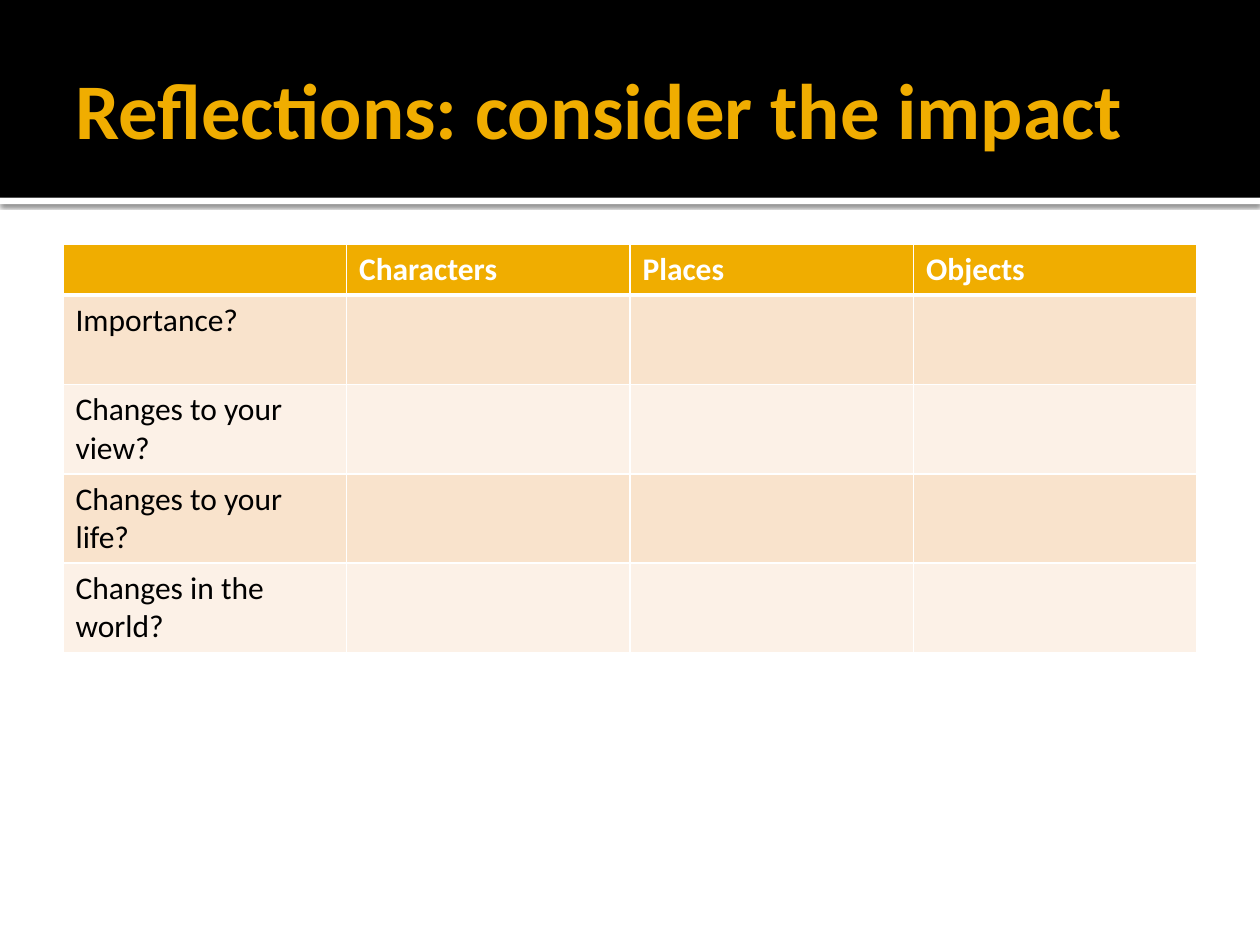
from dataclasses import dataclass

from lxml import etree
from pptx import Presentation
from pptx import util as u
from pptx.dml.color import RGBColor
from pptx.enum import shapes, text
from pptx.oxml import ns


@dataclass(frozen=True)
class Theme:
    font: str = "Calibri"
    gold: str = "F0AD00"
    white: str = "FFFFFF"
    black: str = "000000"
    bands: tuple = ("F9E3CC", "FCF1E7")
    title: int = 45
    body: int = 18


THEME = Theme()
HEADS = ["", "Characters", "Places", "Objects"]
ROWS = ["Importance?", "Changes to your view?",
        "Changes to your life?", "Changes in the world?"]


def write(frame, words, size=THEME.body, color=THEME.black, bold=False):
    run = frame.paragraphs[0].add_run()
    run.text = words
    font = run.font
    font.name, font.size, font.bold = THEME.font, u.Pt(size), bold
    font.color.rgb = RGBColor.from_string(color)


def node(parent, tag, **attrs):
    return etree.SubElement(parent, ns.qn(tag),
                            {key: str(val) for key, val in attrs.items()})


def bar(slide, box, color):
    shape = slide.shapes.add_shape(shapes.MSO_SHAPE.RECTANGLE,
                                   *map(u.Inches, box))
    shape.shadow.inherit = False
    shape.fill.solid()
    shape.fill.fore_color.rgb = RGBColor.from_string(color)
    shape.line.fill.background()
    return shape


def shade(shape):
    """Give the shape a soft shadow straight below it."""
    effects = shape.element.spPr.find(ns.qn("a:effectLst"))
    outer = node(effects, "a:outerShdw", blurRad=u.Pt(2.5), dist=u.Pt(0.8),
                 dir=90 * 60000, algn="tl", rotWithShape=0)
    color = node(outer, "a:srgbClr", val=THEME.black)
    node(color, "a:alpha", val=60000)


def edge(cell, head):
    """Draw white cell borders, thicker along the header rule."""
    props = cell._tc.get_or_add_tcPr()
    widths = {"L": 1, "R": 1, "T": 1, "B": 3 if head else 1}
    for side, width in widths.items():
        line = node(props, f"a:ln{side}", w=u.Pt(width))
        node(node(line, "a:solidFill"), "a:srgbClr", val=THEME.white)


def banner(slide, box):
    left, top, width, height = box
    # White rule under the black band
    shade(bar(slide, (left, top + height, width, 0.05), THEME.white))
    bar(slide, box, THEME.black)

    # Title
    area = (left + 0.5, top + 0.17, width - 1, height - 0.2)
    frame = slide.shapes.add_textbox(*map(u.Inches, area)).text_frame
    frame.word_wrap = True
    frame.vertical_anchor = text.MSO_ANCHOR.MIDDLE
    frame.margin_right = u.Inches(0.05)
    write(frame, "Reflections: consider the impact",
          size=THEME.title, color=THEME.gold, bold=True)


def grid(slide, box):
    data = [HEADS] + [[name] + [""] * (len(HEADS) - 1) for name in ROWS]
    table = slide.shapes.add_table(len(data), len(HEADS),
                                   *map(u.Inches, box)).table
    for col in table.columns:
        col.width = u.Inches(box[2] / len(HEADS))
    for i, row in enumerate(data):
        head = i == 0
        table.rows[i].height = u.Inches(0.4 if head else 0.71)
        fill = THEME.gold if head else THEME.bands[(i - 1) % 2]
        for j, words in enumerate(row):
            cell = table.cell(i, j)
            edge(cell, head)
            cell.fill.solid()
            cell.fill.fore_color.rgb = RGBColor.from_string(fill)
            if words:
                write(cell.text_frame, words, bold=head,
                      color=THEME.white if head else THEME.black)


def main():
    deck = Presentation()
    deck.slide_width, deck.slide_height = u.Inches(10), u.Inches(7.5)
    slide = deck.slides.add_slide(deck.slide_layouts[6])
    banner(slide, (0, 0, 10, 1.57))
    grid(slide, (0.5, 1.94, 9, 3.24))
    deck.save("out.pptx")


if __name__ == "__main__":
    main()
